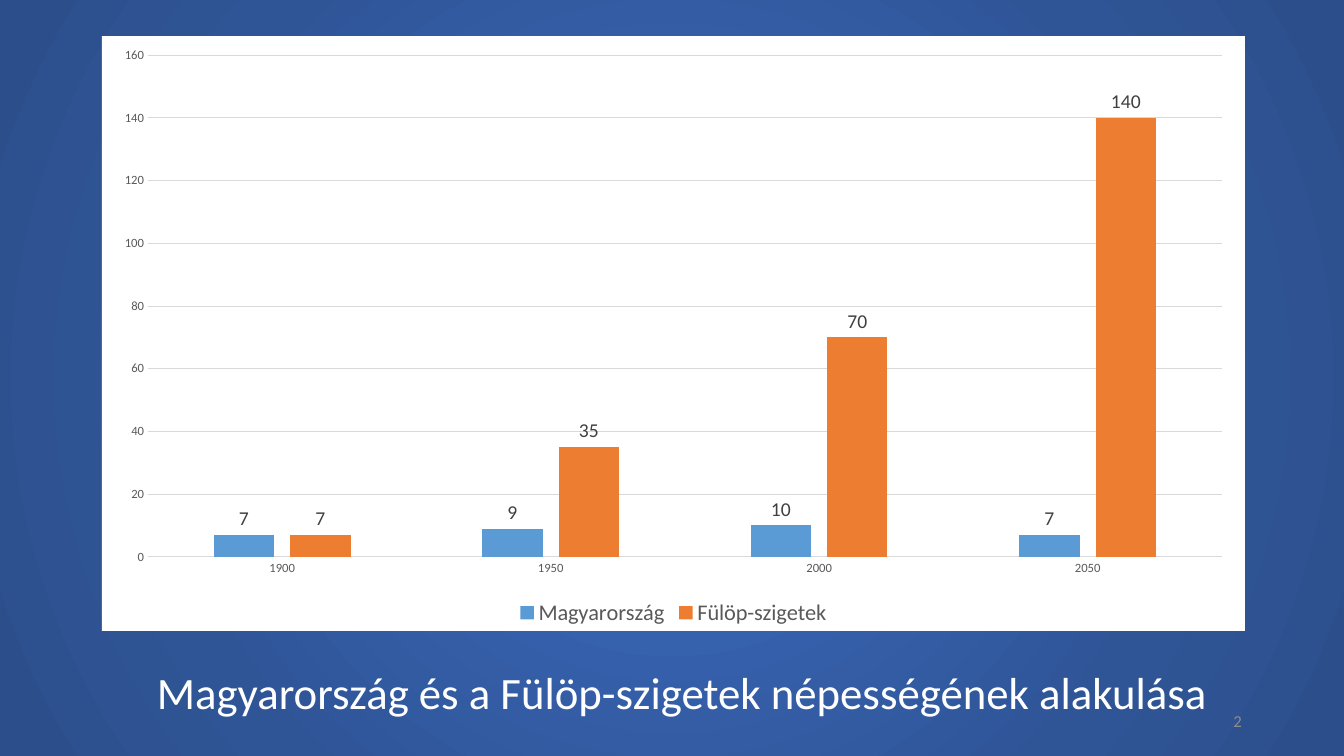
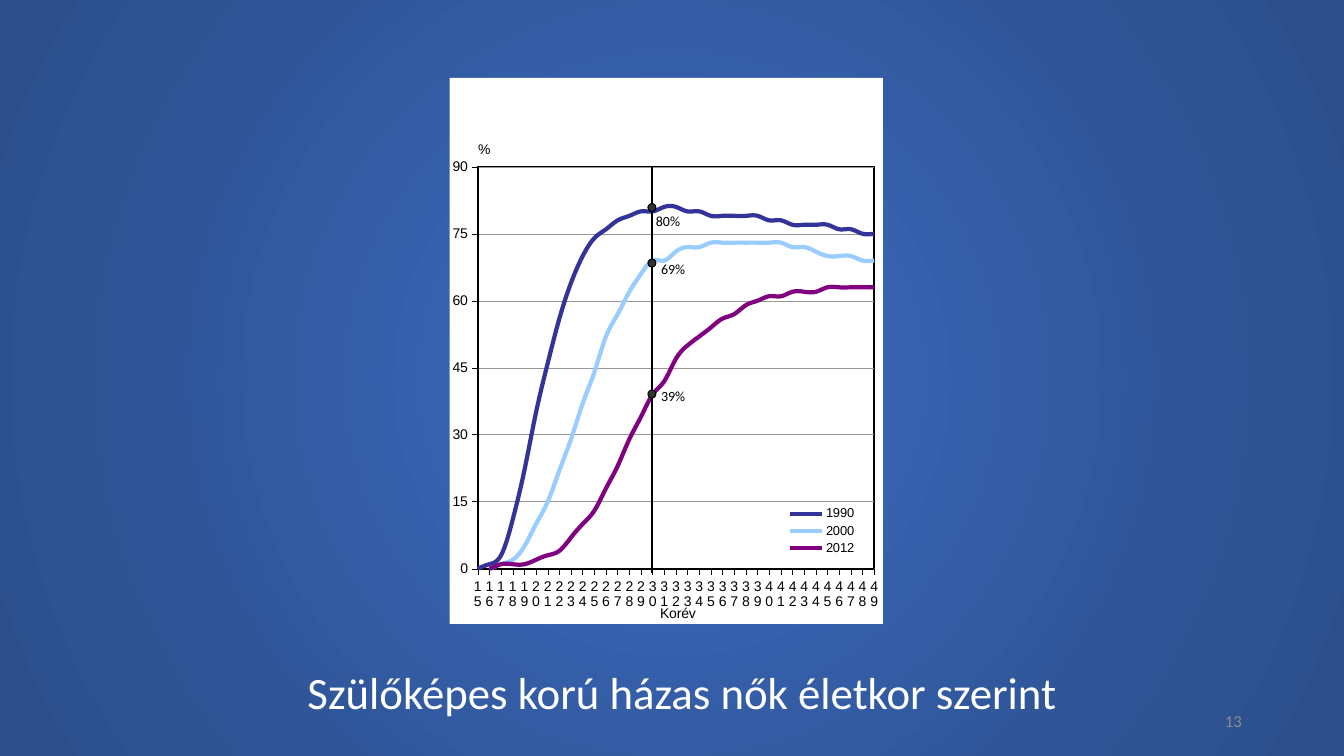
from pptx import Presentation
from pptx.chart.data import CategoryChartData
from pptx.dml.color import RGBColor
from pptx.enum.chart import XL_CHART_TYPE as ChartType
from pptx.enum.chart import XL_LABEL_POSITION as LabelPosition
from pptx.enum.chart import XL_LEGEND_POSITION as LegendPosition
from pptx.enum.chart import XL_TICK_MARK as TickMark
from pptx.enum.shapes import MSO_CONNECTOR as Connector
from pptx.enum.shapes import MSO_SHAPE as Shape
from pptx.enum.text import MSO_ANCHOR as Anchor
from pptx.enum.text import MSO_AUTO_SIZE as AutoSize
from pptx.enum.text import PP_ALIGN as Align
from pptx.oxml import parse_xml
from pptx.oxml.ns import nsdecls, qn
from pptx.util import Cm, Pt

WHITE, BLACK = "FFFFFF", "000000"
GRID, AXIS_TEXT, LABEL_TEXT = "D9D9D9", "595959", "404040"
THIN_GRID, DOT, NUMBER_TEXT = "969696", "333333", "8C8C8C"
BACKGROUND_STOPS = [(0, "3864B3"), (23, "3864B3"), (69, "2F5597"), (97, "2C4F8C")]

POPULATION_YEARS = ["1900", "1950", "2000", "2050"]
POPULATION = [
    ("Magyarország", "5B9BD5", [7, 9, 10, 7]),
    ("Fülöp-szigetek", "ED7D31", [7, 35, 70, 140]),
]
AGES = [str(age) for age in range(15, 50)]
MARRIED_WOMEN = [
    ("1990", "333399", [0, 1, 3, 11, 22, 35, 46, 56, 64, 70, 74, 76, 78, 79, 80, 80, 81, 81,
                        80, 80, 79, 79, 79, 79, 79, 78, 78, 77, 77, 77, 77, 76, 76, 75, 75]),
    ("2000", "99CCFF", [0, 0, 1, 2, 5, 10, 15, 22, 29, 37, 44, 52, 57, 62, 66, 69, 69, 71,
                        72, 72, 73, 73, 73, 73, 73, 73, 73, 72, 72, 71, 70, 70, 70, 69, 69]),
    ("2012", "800080", [0, 0, 1, 1, 1, 2, 3, 4, 7, 10, 13, 18, 23, 29, 34, 39, 42, 47,
                        50, 52, 54, 56, 57, 59, 60, 61, 61, 62, 62, 62, 63, 63, 63, 63, 63]),
]
# Text, left and top of the label, top of the dot, in centimetres
AGE_30_MARKS = [
    ("39%", 16.41, 9.63, 9.83),
    ("69%", 16.41, 6.43, 6.53),
    ("80%", 16.28, 5.23, 5.13),
]
AGE_30_X = 16.43
DOT_SIZE = 0.2


def rgb(color):
    return RGBColor.from_string(color)


def format_font(font, size, color, name="Calibri"):
    font.size, font.name, font.bold = Pt(size), name, False
    font.color.rgb = rgb(color)


def format_line(line, color, width):
    line.color.rgb = rgb(color)
    line.width = Pt(width)


def write_text(frame, text, size=10, color=BLACK, align=Align.LEFT, anchor=Anchor.TOP):
    frame.word_wrap = True
    frame.auto_size = AutoSize.NONE
    frame.vertical_anchor = anchor
    paragraph = frame.paragraphs[0]
    paragraph.alignment = align
    run = paragraph.add_run()
    run.text = text
    format_font(run.font, size, color)


def add_text(slide, box, text, **text_format):
    shape = slide.shapes.add_textbox(*map(Cm, box))
    write_text(shape.text_frame, text, **text_format)


def set_background(master):
    """Give all slides the same round gradient."""
    master.background.fill.solid()
    stops = "".join(
        f'<a:gs pos="{position * 1000}"><a:srgbClr val="{color}"/></a:gs>'
        for position, color in BACKGROUND_STOPS
    )
    gradient = parse_xml(
        f'<a:gradFill {nsdecls("a")} rotWithShape="1"><a:gsLst>{stops}</a:gsLst>'
        '<a:path path="circle"><a:fillToRect l="50000" t="50000" r="50000" b="50000"/>'
        "</a:path></a:gradFill>"
    )
    properties = master.element.find(".//" + qn("p:bgPr"))
    properties.replace(properties.find(qn("a:solidFill")), gradient)


def add_slide(presentation, title, number):
    slide = presentation.slides.add_slide(presentation.slide_layouts[5])
    shape = slide.shapes.title
    shape.left, shape.top, shape.width, shape.height = map(Cm, (2.82, 16.61, 28.75, 1.63))
    write_text(shape.text_frame, title, size=32, color=WHITE, align=Align.CENTER)
    add_text(slide, (23.93, 17.65, 7.62, 1.02), number, size=12, color=NUMBER_TEXT,
             align=Align.RIGHT, anchor=Anchor.MIDDLE)
    return slide


def chart_part(chart, *tags):
    """Find the first XML element below the chart along the given tags."""
    return chart.element.find(".//" + "/".join(qn(tag) for tag in tags))


def chart_xml(tag, content="", attributes=""):
    return parse_xml(f'<c:{tag} {nsdecls("c", "a")} {attributes}>{content}</c:{tag}>')


def set_layout(element, inner=False, **fractions):
    """Place a chart part by fractions of the chart's size."""
    old = element.find(qn("c:layout"))
    if old is not None:
        element.remove(old)
    target = '<c:layoutTarget val="inner"/>' if inner else ""
    modes = "".join(f'<c:{axis}Mode val="edge"/>' for axis in "xy")
    sizes = "".join(f'<c:{key} val="{value}"/>' for key, value in fractions.items())
    layout = chart_xml("layout", f"<c:manualLayout>{target}{modes}{sizes}</c:manualLayout>")
    overlay = element.find(qn("c:overlay"))
    if overlay is None:
        element.insert(0, layout)
    else:
        overlay.addprevious(layout)


def add_chart(slide, box, chart_type, categories, series_rows, font_name):
    data = CategoryChartData()
    data.categories = categories
    for name, _, values in series_rows:
        data.add_series(name, values)
    chart = slide.shapes.add_chart(chart_type, *map(Cm, box), data).chart
    chart.has_title = False
    format_font(chart.font, 10, BLACK, font_name)
    chart_part(chart, "c:chart").addnext(chart_xml(
        "spPr",
        f'<a:solidFill><a:srgbClr val="{WHITE}"/></a:solidFill><a:ln><a:noFill/></a:ln>',
    ))
    chart.plots[0].vary_by_categories = False
    return chart


def format_axis(axis, size, color, font_name, tick):
    axis.major_tick_mark = tick
    axis.minor_tick_mark = TickMark.NONE
    format_font(axis.tick_labels.font, size, color, font_name)


def add_legend(chart, position, size, color, font_name):
    chart.has_legend = True
    chart.legend.position = position
    chart.legend.include_in_layout = False
    format_font(chart.legend.font, size, color, font_name)


def add_axis_title(chart, axis, tag, text, x, y):
    frame = axis.axis_title.text_frame
    frame.text = text
    format_font(frame.paragraphs[0].runs[0].font, 10, BLACK, "Arial")
    title = chart_part(chart, tag, "c:title")
    title.find(".//" + qn("a:bodyPr")).set("rot", "0")
    set_layout(title, x=x, y=y)


def add_population_chart(slide):
    chart = add_chart(slide, (2.57, 0.91, 28.8, 14.99), ChartType.COLUMN_CLUSTERED,
                      POPULATION_YEARS, POPULATION, "Calibri")
    for axis in (chart.category_axis, chart.value_axis):
        format_axis(axis, 9, AXIS_TEXT, "Calibri", TickMark.NONE)
    format_line(chart.category_axis.format.line, GRID, 0.75)
    chart.value_axis.format.line.fill.background()
    format_line(chart.value_axis.major_gridlines.format.line, GRID, 0.75)
    add_legend(chart, LegendPosition.BOTTOM, 16, AXIS_TEXT, "Calibri")
    plot = chart.plots[0]
    plot.gap_width, plot.overlap = 219, -27
    for series, (_, color, _) in zip(plot.series, POPULATION):
        series.format.fill.solid()
        series.format.fill.fore_color.rgb = rgb(color)
        labels = series.data_labels
        labels.show_value = True
        labels.position = LabelPosition.OUTSIDE_END
        format_font(labels.font, 14, LABEL_TEXT)


def add_married_women_chart(slide):
    chart = add_chart(slide, (11.33, 1.96, 10.92, 13.82), ChartType.LINE,
                      AGES, MARRIED_WOMEN, "Arial")
    ages, percent = chart.category_axis, chart.value_axis
    for axis in (ages, percent):
        format_axis(axis, 10, BLACK, "Arial", TickMark.OUTSIDE)
        format_line(axis.format.line, BLACK, 0.25)
    percent.minimum_scale, percent.maximum_scale, percent.major_unit = 0, 90, 15
    format_line(percent.major_gridlines.format.line, THIN_GRID, 0.25)
    add_axis_title(chart, ages, "c:catAx", "Korév", 0.48, 0.96)
    add_axis_title(chart, percent, "c:valAx", "%", 0.06, 0.11)

    # Every age is labelled, and the lines start on the value axis
    chart_part(chart, "c:catAx", "c:txPr", "a:bodyPr").set("rot", "0")
    chart_part(chart, "c:catAx", "c:noMultiLvlLbl").addprevious(
        chart_xml("tickLblSkip", attributes='val="1"'))
    value_axis = chart_part(chart, "c:valAx")
    for old in value_axis.findall(qn("c:crossBetween")):
        value_axis.remove(old)
    value_axis.find(qn("c:crosses")).addnext(
        chart_xml("crossBetween", attributes='val="midCat"'))

    add_legend(chart, LegendPosition.RIGHT, 9.2, BLACK, "Arial")
    set_layout(chart_part(chart, "c:legend"), x=0.76, y=0.78, w=0.2, h=0.1)
    plot_area = chart_part(chart, "c:plotArea")
    set_layout(plot_area, inner=True, x=0.065, y=0.163, w=0.915, h=0.736)
    plot_area.append(chart_xml(
        "spPr",
        '<a:noFill/><a:ln w="12700"><a:solidFill>'
        f'<a:srgbClr val="{BLACK}"/></a:solidFill></a:ln>',
    ))
    for series, (_, color, _) in zip(chart.plots[0].series, MARRIED_WOMEN):
        format_line(series.format.line, color, 3)
        series.smooth = True


def add_age_30_marks(slide):
    line = slide.shapes.add_connector(
        Connector.STRAIGHT, Cm(AGE_30_X), Cm(14.43), Cm(AGE_30_X), Cm(4.22))
    format_line(line.line, BLACK, 1.25)
    line.element.find(qn("p:spPr")).append(parse_xml(f'<a:effectLst {nsdecls("a")}/>'))
    for text, left, top, dot_top in AGE_30_MARKS:
        add_text(slide, (left, top, 1.7, 0.69), text)
        dot = slide.shapes.add_shape(
            Shape.FLOWCHART_CONNECTOR, Cm(AGE_30_X - DOT_SIZE / 2), Cm(dot_top),
            Cm(DOT_SIZE), Cm(DOT_SIZE))
        dot.shadow.inherit = False
        dot.fill.solid()
        dot.fill.fore_color.rgb = rgb(DOT)
        format_line(dot.line, BLACK, 0.75)


def main():
    presentation = Presentation()
    presentation.slide_width, presentation.slide_height = Cm(33.87), Cm(19.05)
    set_background(presentation.slide_master)

    population = add_slide(
        presentation, "Magyarország és a Fülöp-szigetek népességének alakulása", "2")
    add_population_chart(population)

    married_women = add_slide(
        presentation, "Szülőképes korú házas nők életkor szerint", "13")
    add_married_women_chart(married_women)
    add_age_30_marks(married_women)

    presentation.save("out.pptx")


if __name__ == "__main__":
    main()
